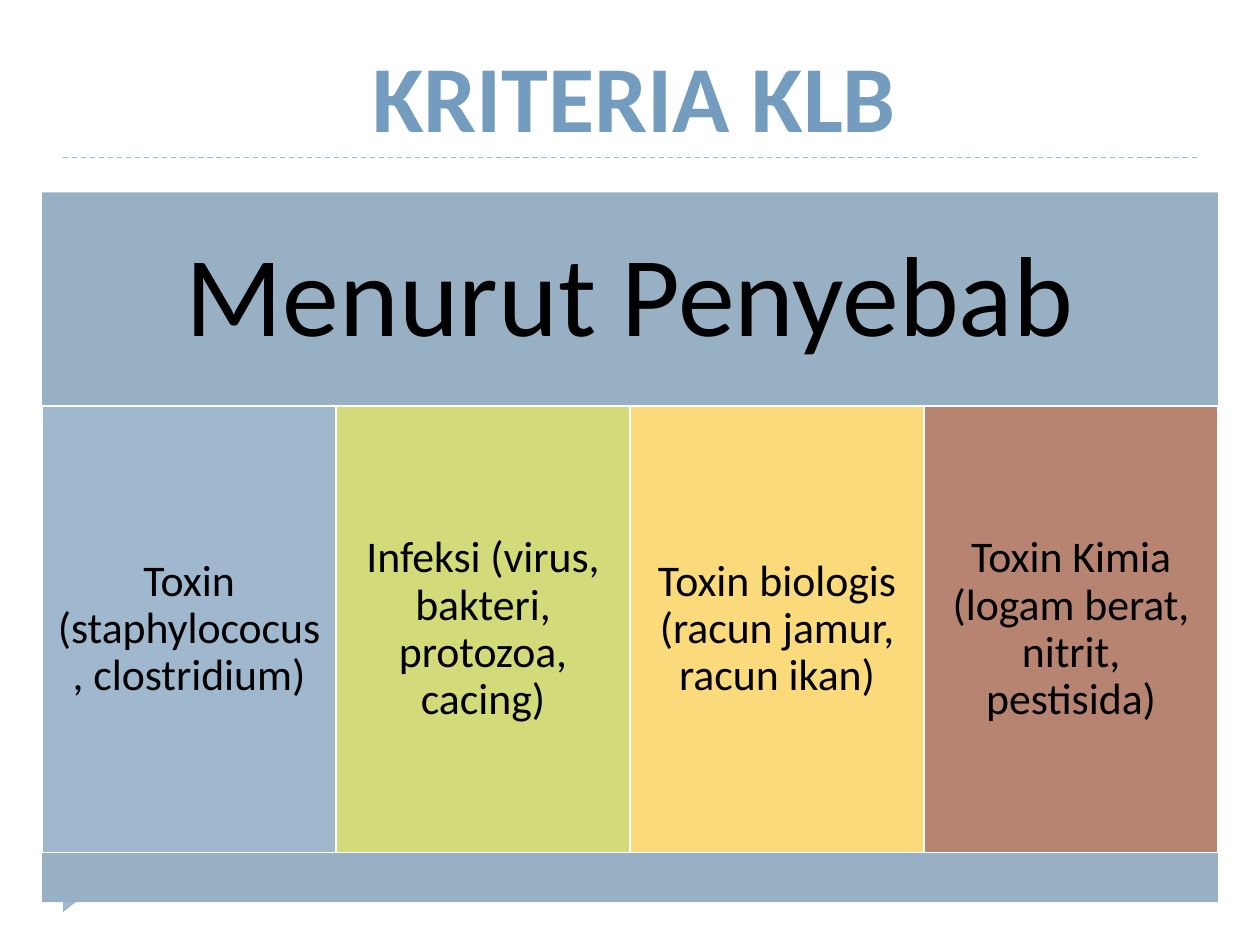
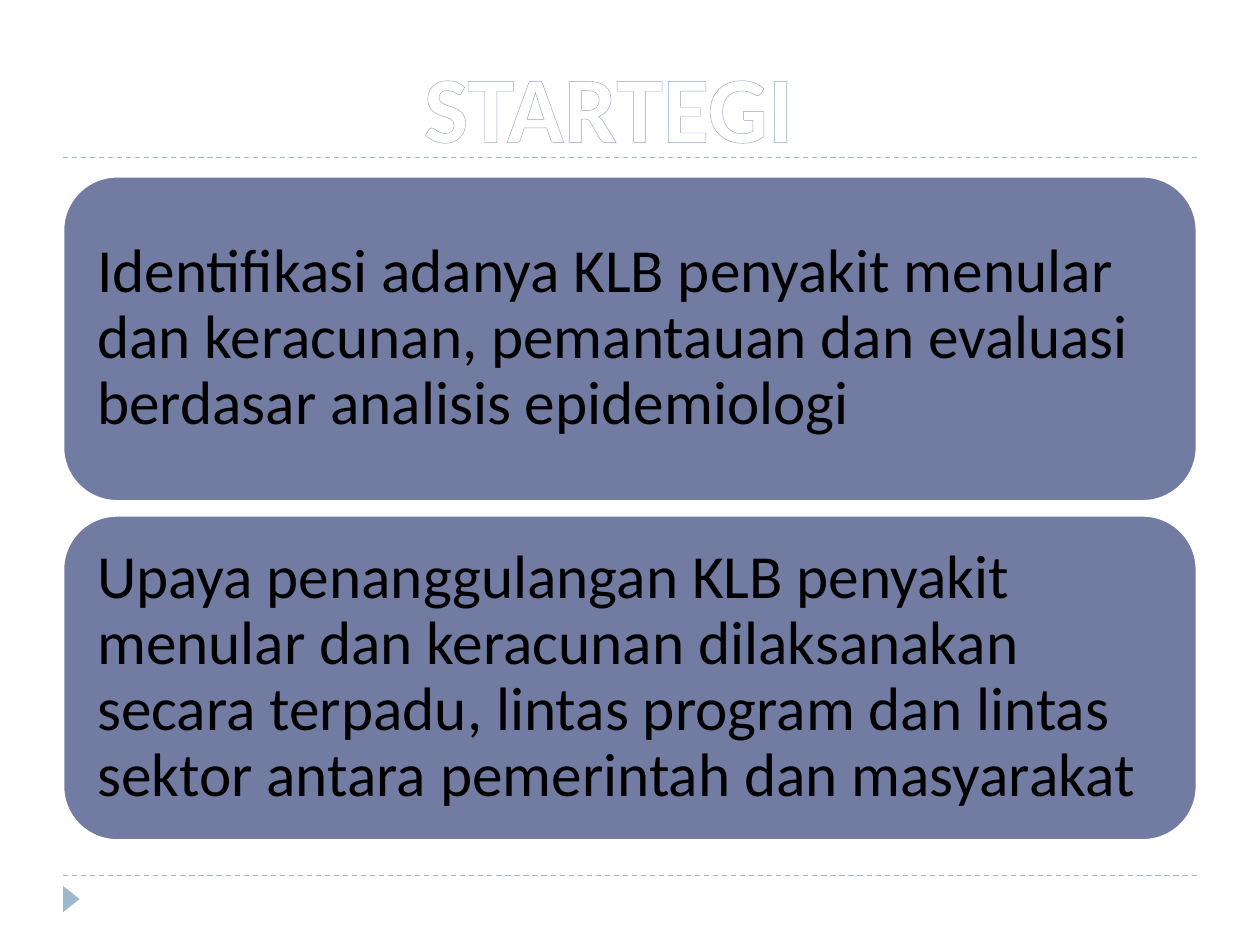
from lxml import etree
from pptx import Presentation
from pptx.dml.color import RGBColor
from pptx.enum.dml import MSO_LINE
from pptx.enum.shapes import MSO_CONNECTOR, MSO_SHAPE as SHAPE
from pptx.enum.text import MSO_ANCHOR, MSO_AUTO_SIZE, PP_ALIGN
from pptx.oxml import parse_xml
from pptx.oxml.ns import nsdecls, qn
from pptx.util import Pt

FONT = "Calibri"
BLACK = RGBColor(0x00, 0x00, 0x00)
WHITE = RGBColor(0xFF, 0xFF, 0xFF)
SKY = RGBColor(0x9F, 0xB8, 0xCD)
STEEL = RGBColor(0x98, 0xB0, 0xC4)
LIME = RGBColor(0xD2, 0xDA, 0x7A)
YELLOW = RGBColor(0xFA, 0xDA, 0x7A)
BRICK = RGBColor(0xB8, 0x84, 0x72)
INDIGO = RGBColor(0x72, 0x7C, 0xA3)
LAVENDER = RGBColor(0x99, 0xA2, 0xCB)
TITLE_BLUES = [(0, RGBColor(0xAF, 0xD2, 0xF1)),
               (75, RGBColor(0x74, 0x9C, 0xBF)),
               (100, RGBColor(0x5E, 0x8A, 0xAF))]


def add_box(s, left, top, width, height, fill, kind=SHAPE.RECTANGLE, edge=None):
    sp = s.shapes.add_shape(kind, Pt(left), Pt(top), Pt(width), Pt(height))
    sp.shadow.inherit = False
    sp.fill.solid()
    sp.fill.fore_color.rgb = fill
    if edge is None:
        sp.line.fill.background()
    else:
        sp.line.color.rgb = edge
        sp.line.width = Pt(1.5)
    return sp


def write(sp, text, size, color=BLACK, align=PP_ALIGN.CENTER, bold=False,
          inset=None, spacing=None, wrap=True, anchor=MSO_ANCHOR.MIDDLE):
    tf = sp.text_frame
    tf.word_wrap = wrap
    tf.vertical_anchor = anchor
    if inset is not None:
        tf.margin_left = tf.margin_right = Pt(inset)
        tf.margin_top = tf.margin_bottom = Pt(inset)
    p = tf.paragraphs[0]
    p.alignment = align
    p.line_spacing = spacing
    r = p.add_run()
    r.text = text
    r.font.name = FONT
    r.font.size = Pt(size)
    r.font.bold = bold
    r.font.color.rgb = color
    return r


prs = Presentation()
prs.slide_width, prs.slide_height = Pt(720), Pt(540)

# Shared frame: dashed rules, corner marker and title
frames = [
    ("KRITERIA KLB", 203.75, 18, 317.5, [90]),
    ("STARTEGI", 234, 24, 227.5, [500.5, 90]),
]
slides, titles = [], []
for title, left, top, width, rules in frames:
    s = prs.slides.add_slide(prs.slide_layouts[6])
    for y in rules:
        rule = s.shapes.add_connector(MSO_CONNECTOR.STRAIGHT, Pt(36), Pt(y), Pt(684), Pt(y))
        rule.line.color.rgb = SKY
        rule.line.width = Pt(0.75)
        rule.line.dash_style = MSO_LINE.DASH
        etree.SubElement(rule._element.spPr, qn("a:effectLst"))
    marker = add_box(s, 33.25, 509, 15, 9.5, SKY, SHAPE.ISOSCELES_TRIANGLE)
    marker.rotation = 90
    box = s.shapes.add_textbox(Pt(left), Pt(top), Pt(width), Pt(72.5))
    r = write(box, title, 54, color=WHITE, bold=True, wrap=False, anchor=MSO_ANCHOR.TOP)
    box.text_frame.auto_size = MSO_AUTO_SIZE.SHAPE_TO_FIT_TEXT
    slides.append(s)
    titles.append(r)

# First title: vertical gradient; second title: outlined letters
stops = "".join(f'<a:gs pos="{pos * 1000}"><a:srgbClr val="{color}"/></a:gs>'
                for pos, color in TITLE_BLUES)
gradient = parse_xml(f'<a:gradFill {nsdecls("a")}><a:gsLst>{stops}</a:gsLst>'
                     '<a:lin ang="5400000"/></a:gradFill>')
rPr = titles[0].font._element
rPr.replace(rPr.find(qn("a:solidFill")), gradient)

outline = parse_xml(f'<a:ln {nsdecls("a")} w="{Pt(2.48)}"><a:solidFill>'
                    f'<a:srgbClr val="{LAVENDER}"/></a:solidFill></a:ln>')
titles[1].font._element.insert(0, outline)

# Slide 1: header band, four causes, closing band
s = slides[0]
causes = [
    ("Toxin (staphylococus, clostridium)", SKY),
    ("Infeksi (virus, bakteri, protozoa, cacing)", LIME),
    ("Toxin biologis (racun jamur, racun ikan)", YELLOW),
    ("Toxin Kimia (logam berat, nitrit, pestisida)", BRICK),
]
band_left, band_width = 24, 672
column_width = band_width / len(causes)
header = add_box(s, band_left, 110, band_width, 122, STEEL)
write(header, "Menurut Penyebab", 65, inset=19.5, spacing=0.9)
for i, (cause, color) in enumerate(causes):
    column = add_box(s, band_left + i * column_width, 232, column_width, 255.5,
                     color, edge=WHITE)
    write(column, cause, 25, inset=7.5, spacing=0.9)
add_box(s, band_left, 487.5, band_width, 28, STEEL)

# Slide 2: stacked strategy cards
s = slides[1]
strategies = [
    "Identifikasi adanya KLB penyakit menular dan keracunan, pemantauan dan "
    "evaluasi berdasar analisis epidemiologi",
    "Upaya penanggulangan KLB penyakit menular dan keracunan dilaksanakan secara "
    "terpadu, lintas program dan lintas sektor antara pemerintah dan masyarakat",
]
for i, strategy in enumerate(strategies):
    card = add_box(s, 36, 100.75 + i * 193.75, 648, 185.75, INDIGO,
                   SHAPE.ROUNDED_RECTANGLE, edge=WHITE)
    write(card, strategy, 35, align=PP_ALIGN.LEFT, inset=10.5, spacing=0.9)

prs.save("out.pptx")
